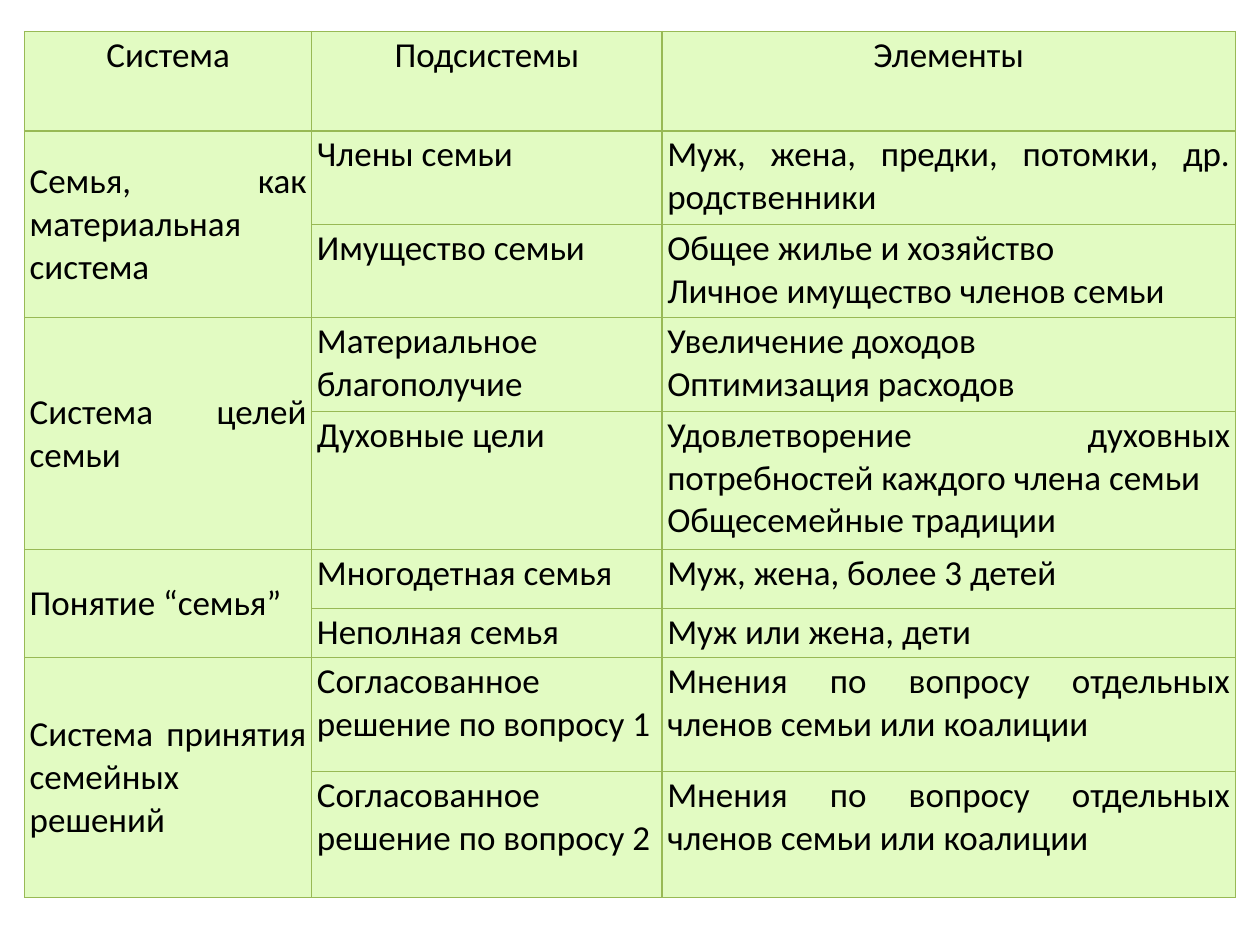
import pptx
import pptx.util
import pptx.dml.color
import pptx.enum.text
import pptx.oxml
import pptx.oxml.ns

Pt = pptx.util.Pt
ALIGN = pptx.enum.text.PP_ALIGN
ANCHOR = pptx.enum.text.MSO_ANCHOR

WIDTHS = [164.16, 200.16, 327.6]
HEIGHTS = [56.88, 53.4, 53.4, 53.4, 79, 34, 28, 65, 72]
HEADS = ["Система", "Подсистемы", "Элементы"]
GROUPS = [
    ("Семья, как материальная система", [
        ("Члены семьи", "Муж, жена, предки, потомки, др. родственники"),
        ("Имущество семьи", "Общее жилье и хозяйство\nЛичное имущество членов семьи"),
    ]),
    ("Система целей семьи", [
        ("Материальное благополучие", "Увеличение доходов\nОптимизация расходов"),
        ("Духовные цели",
         "Удовлетворение духовных потребностей каждого члена семьи\nОбщесемейные традиции"),
    ]),
    ("Понятие “семья”", [
        ("Многодетная семья", "Муж, жена, более 3 детей"),
        ("Неполная семья", "Муж или жена, дети"),
    ]),
    ("Система принятия семейных решений", [
        (f"Согласованное решение по вопросу {num}",
         "Мнения по вопросу отдельных членов семьи или коалиции")
        for num in (1, 2)
    ]),
]


def color(code):
    return pptx.dml.color.RGBColor.from_string(code)


def apply(item, values):
    for name, value in values.items():
        setattr(item, name, value)


class Painter:
    fill = "E2FBC2"
    edge = "98B955"
    font = {"name": "Calibri", "size": Pt(20), "bold": False}
    ink = "000000"
    inset = {"margin_left": Pt(3), "margin_right": Pt(3),
             "margin_top": Pt(1.5), "margin_bottom": Pt(1.5)}

    def __init__(self, slide):
        self.slide = slide

    def table(self, left, top, widths, heights):
        frame = self.slide.shapes.add_table(
            len(heights), len(widths), Pt(left), Pt(top),
            Pt(sum(widths)), Pt(sum(heights)))
        grid = frame.table
        apply(grid, {"first_row": False, "horz_banding": False})
        for col, width in zip(grid.columns, widths):
            col.width = Pt(width)
        for row, height in zip(grid.rows, heights):
            row.height = Pt(height)
        for cell in grid.iter_cells():
            self.border(cell)
            cell.fill.solid()
            cell.fill.fore_color.rgb = color(self.fill)
            apply(cell, self.inset)
        return grid

    def border(self, cell):
        props = cell._tc.get_or_add_tcPr()
        space = pptx.oxml.ns.nsdecls("a")
        for side in "LRTB":
            props.append(pptx.oxml.parse_xml(
                f'<a:ln{side} {space} w="{Pt(0.75)}"><a:solidFill>'
                f'<a:srgbClr val="{self.edge}"/></a:solidFill></a:ln{side}>'))

    def label(self, cell, text, align=ALIGN.JUSTIFY, anchor=ANCHOR.TOP):
        cell.text = text
        cell.vertical_anchor = anchor
        for para in cell.text_frame.paragraphs:
            para.alignment = align
            for run in para.runs:
                apply(run.font, self.font)
                run.font.color.rgb = color(self.ink)


def main():
    deck = pptx.Presentation()
    apply(deck, {"slide_width": Pt(720), "slide_height": Pt(540)})
    paint = Painter(deck.slides.add_slide(deck.slide_layouts[6]))
    grid = paint.table(14, 18, WIDTHS, HEIGHTS)
    for col, head in enumerate(HEADS):
        paint.label(grid.cell(0, col), head, ALIGN.CENTER)
    row = 1
    for system, parts in GROUPS:
        first = grid.cell(row, 0)
        first.merge(grid.cell(row + len(parts) - 1, 0))
        paint.label(first, system, anchor=ANCHOR.MIDDLE)
        for part in parts:
            for col, text in enumerate(part, 1):
                paint.label(grid.cell(row, col), text)
            row += 1
    deck.save("out.pptx")


if __name__ == "__main__":
    main()
